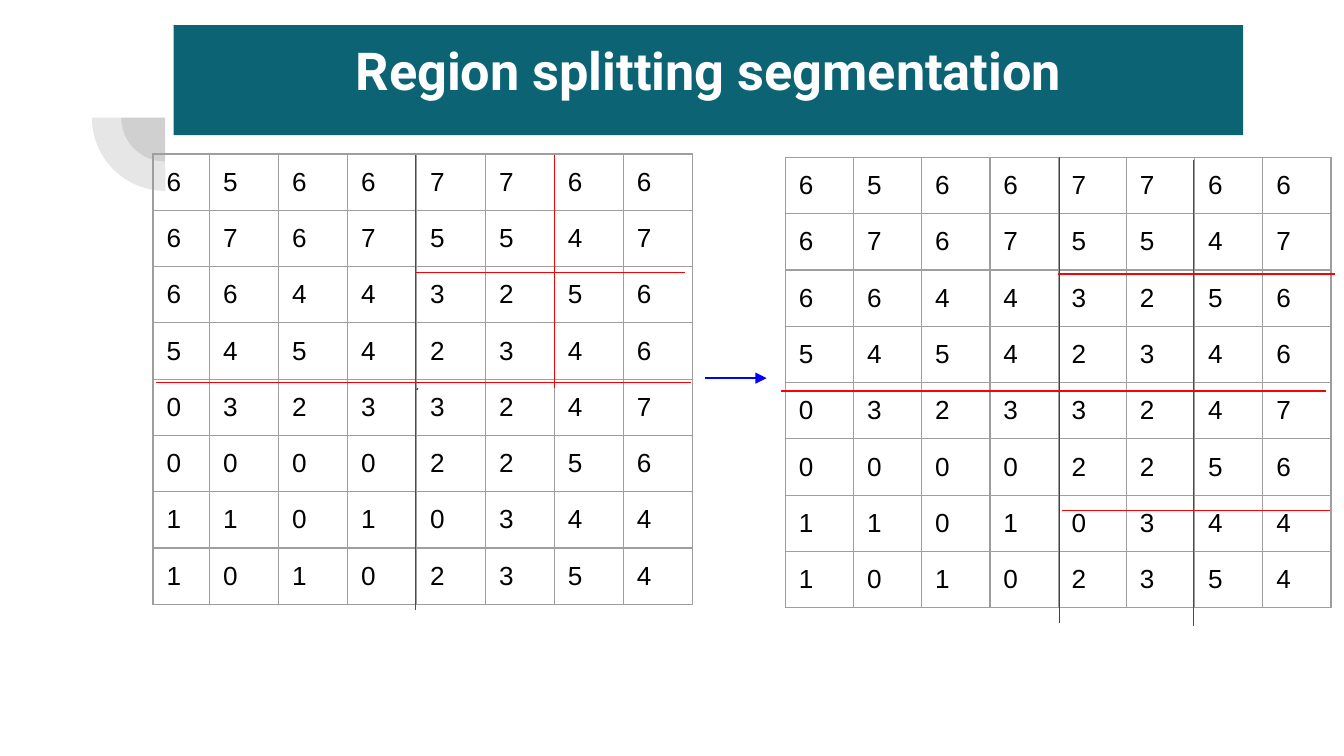
from dataclasses import dataclass

from lxml import etree
from pptx import Presentation
from pptx.dml.color import RGBColor
from pptx.enum import shapes, text
from pptx.oxml.ns import qn
from pptx.util import Pt


@dataclass(frozen=True)
class Theme:
    banner: RGBColor = RGBColor(0x0B, 0x63, 0x74)
    title: RGBColor = RGBColor(0xFF, 0xFF, 0xFF)
    digit: RGBColor = RGBColor(0, 0, 0)
    grey: RGBColor = RGBColor(0x42, 0x42, 0x42)
    red: RGBColor = RGBColor(0xFF, 0, 0)
    blue: RGBColor = RGBColor(0, 0, 0xFF)
    border: str = "9E9E9E"
    title_size: int = 28
    digit_size: int = 14
    line: float = 0.75
    inset: float = 7.2


T = Theme()

GRID = ["65667766", "67675547", "66443256", "54542346",
        "03233247", "00002256", "11010344", "10102354"]


def add_digit_grid(s, left, top, widths, row_height):
    """Add the pixel values as an unfilled table with thin borders."""
    frame = s.shapes.add_table(len(GRID), len(widths), Pt(left), Pt(top),
                               Pt(sum(widths)), Pt(row_height * len(GRID)))
    table = frame.table
    table.first_row = table.horz_banding = False
    for column, width in zip(table.columns, widths):
        column.width = Pt(width)
    for row, digits in zip(table.rows, GRID):
        row.height = Pt(row_height)
        for cell, digit in zip(row.cells, digits):
            cell.margin_left = cell.margin_right = Pt(T.inset)
            cell.margin_top = cell.margin_bottom = Pt(T.inset)
            r = cell.text_frame.paragraphs[0].add_run()
            r.text = digit
            r.font.name = "Arial"
            r.font.size = Pt(T.digit_size)
            r.font.color.rgb = T.digit
            props = cell._tc.get_or_add_tcPr()
            for side in ("lnL", "lnR", "lnT", "lnB"):
                ln = etree.SubElement(props, qn(f"a:{side}"), w=str(Pt(T.line)))
                fill = etree.SubElement(ln, qn("a:solidFill"))
                etree.SubElement(fill, qn("a:srgbClr"), val=T.border)
            cell.fill.background()


def add_line(s, x1, y1, x2, y2, color):
    line = s.shapes.add_connector(shapes.MSO_CONNECTOR.STRAIGHT,
                                  Pt(x1), Pt(y1), Pt(x2), Pt(y2))
    line.line.color.rgb = color
    line.line.width = Pt(T.line)
    etree.SubElement(line._element.spPr, qn("a:effectLst"))
    return line


prs = Presentation()
prs.slide_width, prs.slide_height = Pt(720), Pt(405)
s = prs.slides.add_slide(prs.slide_layouts[5])

# Title banner
title = s.shapes.title
title.left, title.top, title.width, title.height = Pt(93), Pt(13.5), Pt(573), Pt(59)
title.fill.solid()
title.fill.fore_color.rgb = T.banner
tf = title.text_frame
tf.word_wrap = True
tf.auto_size = text.MSO_AUTO_SIZE.NONE
tf.vertical_anchor = text.MSO_ANCHOR.TOP
tf.margin_left = tf.margin_right = tf.margin_top = tf.margin_bottom = Pt(T.inset)
p = tf.paragraphs[0]
p.alignment = text.PP_ALIGN.CENTER
r = p.add_run()
r.text = "Region splitting segmentation"
r.font.name = "Roboto"
r.font.size = Pt(T.title_size)
r.font.bold = True
r.font.color.rgb = T.title

# Concentric quarter circles
CENTER_X, CENTER_Y = 88.5, 63
for size in (47, 78.5):
    pie = s.shapes.add_shape(shapes.MSO_SHAPE.PIE, Pt(CENTER_X - size / 2),
                             Pt(CENTER_Y - size / 2), Pt(size), Pt(size))
    pie.adjustments[0], pie.adjustments[1] = 107.93, 162
    pie.rotation = 270
    pie.shadow.inherit = False
    pie.line.fill.background()
    pie.fill.solid()
    pie.fill.fore_color.rgb = T.grey
    color = pie._element.spPr.find(f"{qn('a:solidFill')}/{qn('a:srgbClr')}")
    etree.SubElement(color, qn("a:alpha"), val="13000")

# Image before the second split
add_digit_grid(s, 82, 82.5, [30.4] + [36.95] * 7, 30.1)
for x1, y1, x2, y2, color in [
    (222.5, 82.8, 222.5, 326.9, T.red),
    (83.5, 205, 370, 205, T.red),
    (297, 82.8, 297, 208, T.red),
    (222.5, 146, 367.2, 146, T.red),
    (223.9, 208, 223.2, 208.8, T.grey),
]:
    add_line(s, x1, y1, x2, y2, color)

# Image after the second split
add_digit_grid(s, 420.75, 84.3, [36.55] * 8, 30.1)
arrow = add_line(s, 377.5, 202.6, 410.7, 202.6, T.blue)
etree.SubElement(arrow.line._get_or_add_ln(), qn("a:tailEnd"), type="triangle")
for x1, y1, x2, y2, color in [
    (567.5, 84.3, 567.5, 333.5, T.grey),
    (418.5, 209.4, 710.2, 209.4, T.red),
    (639.5, 85.7, 639.5, 335.5, T.red),
    (568.8, 273.5, 712.3, 273.5, T.red),
    (567, 146.8, 715, 146.8, T.red),
]:
    add_line(s, x1, y1, x2, y2, color)

prs.save("out.pptx")
